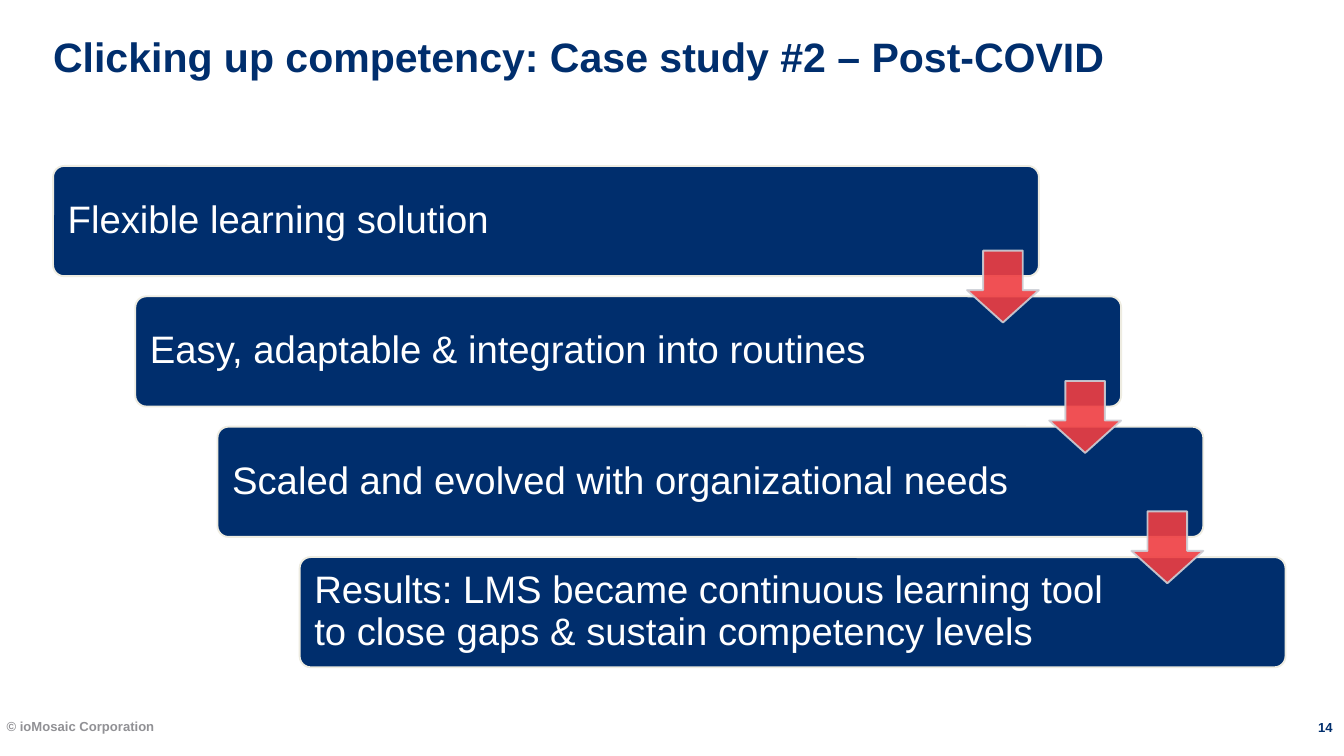
import pptx
import pptx.dml.color
import pptx.enum.shapes
import pptx.enum.text
import pptx.oxml.ns
import pptx.util
from lxml import etree

Inches = pptx.util.Inches
Pt = pptx.util.Pt
ShapeType = pptx.enum.shapes.MSO_SHAPE
Anchor = pptx.enum.text.MSO_ANCHOR
Align = pptx.enum.text.PP_ALIGN

COLORS = {
    "navy": "002E6D",
    "white": "FFFFFF",
    "gray": "919195",
    "bar_line": "EEECE1",
    "arrow": "EF3E42",
    "arrow_line": "CDD0D7",
}
STEPS = [
    "Flexible learning solution",
    "Easy, adaptable & integration into routines",
    "Scaled and evolved with organizational needs",
    "Results: LMS became continuous learning tool to close gaps & sustain competency levels",
]
BAR_LEFT, BAR_TOP = 0.79, 2.47
BAR_WIDTH, BAR_HEIGHT = 14.67, 1.64
STEP_RIGHT, STEP_DOWN = 3.67 / 3, 1.94
ARROW_SIZE = 1.07


def rgb(name):
    return pptx.dml.color.RGBColor.from_string(COLORS[name])


def set_margins(frame, left, top, right, bottom):
    frame.margin_left, frame.margin_top = Inches(left), Inches(top)
    frame.margin_right, frame.margin_bottom = Inches(right), Inches(bottom)


def write(frame, text, size, color, bold=False, align=Align.LEFT):
    frame.word_wrap = True
    frame.text = text
    paragraph = frame.paragraphs[0]
    paragraph.alignment = align
    font = paragraph.font
    font.name, font.size, font.bold = "Arial", Pt(size), bold
    font.color.rgb = rgb(color)
    return paragraph


def add_title(slide, text):
    title = slide.shapes.title
    title.left, title.top = Inches(0.79), Inches(0.47)
    title.width, title.height = Inches(18.34), Inches(1.51)
    frame = title.text_frame
    set_margins(frame, 0, 0, 0.1, 0)
    frame.vertical_anchor = Anchor.TOP
    frame.auto_size = pptx.enum.text.MSO_AUTO_SIZE.NONE
    write(frame, text, 44, "navy", bold=True)


def add_text(slide, left, top, width, height):
    box = slide.shapes.add_textbox(Inches(left), Inches(top), Inches(width), Inches(height))
    return box.text_frame


def add_shape(slide, kind, left, top, width, height, adjustments, fill, line):
    shape = slide.shapes.add_shape(
        kind, Inches(left), Inches(top), Inches(width), Inches(height)
    )
    for index, value in enumerate(adjustments):
        shape.adjustments[index] = value
    shape.shadow.inherit = False
    shape.fill.solid()
    shape.fill.fore_color.rgb = rgb(fill)
    shape.line.color.rgb = rgb(line)
    shape.line.width = Pt(2)
    return shape


def add_bar(slide, left, top, text):
    bar = add_shape(slide, ShapeType.ROUNDED_RECTANGLE, left, top, BAR_WIDTH, BAR_HEIGHT,
                    [0.1], "navy", "bar_line")
    frame = bar.text_frame
    set_margins(frame, 0.17, 0.17, 2.45, 0.17)
    frame.vertical_anchor = Anchor.MIDDLE
    write(frame, text, 41, "white").line_spacing = 0.9


def add_arrow(slide, left, top):
    arrow = add_shape(slide, ShapeType.DOWN_ARROW, left, top, ARROW_SIZE, ARROW_SIZE,
                      [0.55, 0.45], "arrow", "arrow_line")
    qn = pptx.oxml.ns.qn
    for color in arrow.element.spPr.iter(qn("a:srgbClr")):
        etree.SubElement(color, qn("a:alpha"), val="90000")


def main():
    presentation = pptx.Presentation()
    presentation.slide_width, presentation.slide_height = Inches(20), Inches(11.25)
    slide = presentation.slides.add_slide(presentation.slide_layouts[5])
    add_title(slide, "Clicking up competency: Case study #2 – Post-COVID")

    copyright_frame = add_text(slide, 0, 10.64, 13.34, 0.6)
    write(copyright_frame, "© ioMosaic Corporation", 14, "gray", bold=True)
    number_frame = add_text(slide, 19.45, 10.7, 0.55, 0.45)
    set_margins(number_frame, 0, 0, 0, 0)
    write(number_frame, "14", 14, "navy", bold=True, align=Align.CENTER)

    corners = [(BAR_LEFT + i * STEP_RIGHT, BAR_TOP + i * STEP_DOWN) for i in range(len(STEPS))]
    for (left, top), text in zip(corners, STEPS):
        add_bar(slide, left, top, text)
    for left, top in corners[:-1]:
        add_arrow(slide, left + BAR_WIDTH - ARROW_SIZE, top + 1.26)

    presentation.save("out.pptx")


if __name__ == "__main__":
    main()
